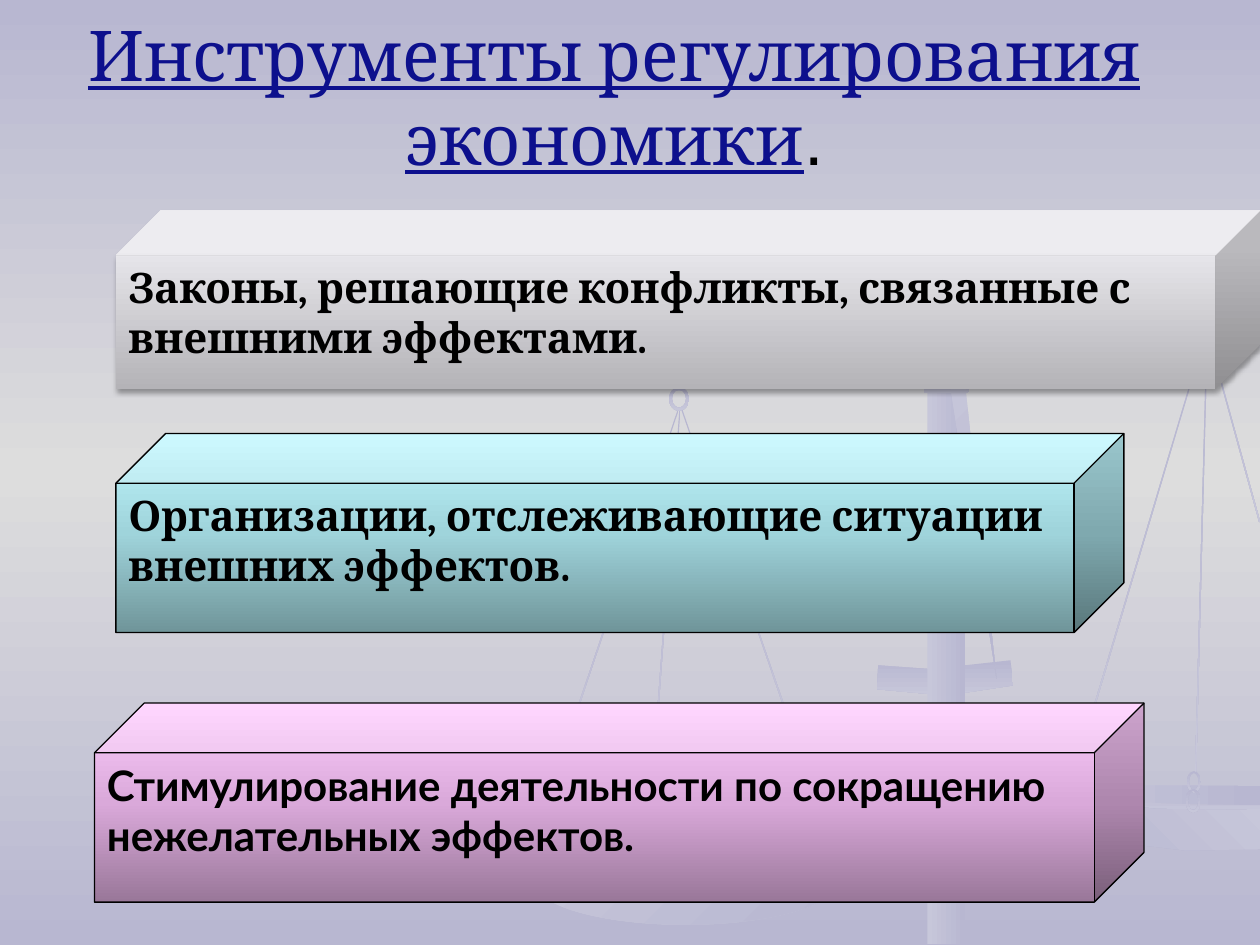
"""Builds the slide on instruments of economic regulation, with three blocks over a pair of scales."""
from lxml import etree
from pptx import Presentation, util as u
from pptx.dml.color import RGBColor
from pptx.enum import shapes as s, text as t
from pptx.oxml import ns

PX = 9144
DARK, LIGHT = "B8B7D1", "C7C7DA"
LIGHTEN, DEEPEN = [(0, DARK), (100, LIGHT)], [(0, LIGHT), (100, DARK)]
RECT, OVAL, ROUND, RING = (s.MSO_SHAPE.RECTANGLE, s.MSO_SHAPE.OVAL,
                           s.MSO_SHAPE.ROUNDED_RECTANGLE, s.MSO_SHAPE.DONUT)


def shade(fill, owner, angle, stops):
    fill.gradient()
    fill.gradient_angle = (360 - angle) % 360
    ramp = owner.xpath(".//a:gsLst")[0]
    for old in list(ramp):
        ramp.remove(old)
    for position, colour in stops:
        stop = etree.SubElement(ramp, ns.qn("a:gs"), pos=str(position * 1000))
        etree.SubElement(stop, ns.qn("a:srgbClr"), val=colour)


def style(font, name, colour, **options):
    font.name = name
    font.color.rgb = RGBColor.from_string(colour)
    for option, value in options.items():
        setattr(font, option, value)


deck = Presentation()
deck.slide_width, deck.slide_height = 1000 * PX, 750 * PX
slide = deck.slides.add_slide(deck.slide_layouts[6])
shade(slide.background.fill, slide.element, 90, [(0, DARK), (50, "DDDDDD"), (100, DARK)])

cords = [(904, 260, 360, 16.6), (953, 266, 347, 1.5), (979, 264, 153, 344.6),
         (598, 315, 353, 341), (479, 316, 368, 18.6), (527, 325, 331, 4.2)]
rings = [(846, 609, 11, 17), (531, 293, 16, 17), (531, 307, 16, 19), (951, 234, 15, 17), (950, 249, 16, 19),
         (942, 612, 11, 17), (941, 626, 12, 19), (509, 655, 15, 16), (656, 672, 16, 19), (417, 672, 12, 16),
         (650, 658, 16, 17)]
hooks = [[(x, y), (x + 18, y - 2), (x + 13, y + 10), (x + 13, y + 25), (x + 5, y + 25), (x + 5, y + 11)]
         for x, y in [(531, 270), (950, 211)]]
crosspiece = [(697, 528), (739, 531), (802, 524), (804, 544), (751, 552), (696, 547)]
right_rim = [(1000, 626), (910, 624), (836, 624), (827, 628), (852, 638), (914, 644), (1000, 645)]
right_bowl = [(831, 633), (842, 649), (882, 668), (941, 675), (1000, 674), (1000, 643), (918, 642)]
right_pan = [(1000, 624), (862, 623), (834, 628), (878, 635), (933, 638), (1000, 639)]
beam = [(973, 196), (976, 208), (525, 273), (524, 264), (737, 212)]
stay = [(791, 539), (750, 280), (748, 268), (760, 265), (763, 277)]
cap = [(752, 247), (772, 253), (779, 271), (724, 271), (732, 253)]

parts = [(RECT, (734, 237, 34, 18), 0, 90, LIGHTEN), (OVAL, (746, 206, 8, 8), 0, 90, LIGHTEN)]
parts += [(RECT, (x, y, 1, length), turn, 90, LIGHTEN) for x, y, length, turn in cords]
parts += [(None, outline, 0, angle, stops) for outline, angle, stops in [
    (crosspiece, 90, LIGHTEN), (right_rim, 90, LIGHTEN), (right_bowl, 315, LIGHTEN), (right_pan, 0, DEEPEN),
    (hooks[0], 90, LIGHTEN), (hooks[1], 90, LIGHTEN), (beam, 0, DEEPEN)]]
parts += [(RING, box, 0, 90, LIGHTEN) for box in rings]
parts += [
    (OVAL, (424, 666, 240, 68), 0, 45, DEEPEN),
    (OVAL, (416, 666, 261, 50), 0, 90, LIGHTEN),
    (OVAL, (424, 670, 247, 38), 0, 0, LIGHTEN),
    (RECT, (736, 308, 30, 441), 0, 0, DEEPEN),
    (RECT, (744, 268, 13, 42), 0, 90, LIGHTEN),
    (ROUND, (733, 303, 36, 9), 0, 90, LIGHTEN),
    (None, stay, 0, 45, DEEPEN),
    (None, cap, 0, 0, DEEPEN),
]
scales = slide.shapes.add_group_shape()
for preset, geometry, turn, angle, stops in parts:
    if preset is None:
        outline = scales.shapes.build_freeform(*geometry[0], scale=PX)
        outline.add_line_segments(geometry[1:])
        part = outline.convert_to_shape()
    else:
        part = scales.shapes.add_shape(preset, *[length * PX for length in geometry])
    if preset is RING:
        part.adjustments[0] = 0.15
    part.rotation = turn
    part.shadow.inherit = False
    part.line.fill.background()
    shade(part.fill, part.element, angle, stops)

title = slide.shapes.add_textbox(25 * PX, 17 * PX, 925 * PX, 117 * PX).text_frame
title.word_wrap = True
title.vertical_anchor = t.MSO_ANCHOR.MIDDLE
heading = title.paragraphs[0]
heading.alignment = t.PP_ALIGN.CENTER
heading.font.size = u.Pt(40)
for words, face, colour, underline in [("Инструменты регулирования экономики", "Cambria", "0D108D", True),
                                       (".", "Arial", "000000", False)]:
    run = heading.add_run()
    run.text = words
    style(run.font, face, colour, underline=underline)

instruments = [
    ((92, 167, 908, 142), [(0, "B4B3B7"), (80, "E9E8ED"), (100, "EAE9EE")], False, "Cambria",
     "Законы, решающие конфликты, связанные с внешними эффектами."),
    ((92, 344, 800, 158), [(0, "70959A"), (50, "9FD4DB"), (100, "C1F8FF")], True, "Cambria",
     "Организации, отслеживающие ситуации внешних эффектов."),
    ((75, 558, 833, 158), [(0, "997799"), (50, "DAA9DA"), (100, "FFCCFF")], True, "Lato",
     "Стимулирование деятельности по сокращению нежелательных эффектов."),
]
for box, stops, outlined, face, words in instruments:
    block = slide.shapes.add_shape(s.MSO_SHAPE.CUBE, *[length * PX for length in box])
    block.shadow.inherit = False
    shade(block.fill, block.element, 270, stops)
    if outlined:
        block.line.color.rgb = RGBColor.from_string("000000")
        block.line.width = u.Pt(0.75)
    else:
        block.line.fill.background()
        effects = block.element.xpath("./p:spPr/a:effectLst")[0]
        shadow = etree.SubElement(effects, ns.qn("a:outerShdw"), blurRad=str(u.Pt(3.1)), dist=str(u.Pt(1.8)),
                                  dir="5400000", rotWithShape="0")
        tint = etree.SubElement(shadow, ns.qn("a:srgbClr"), val="000000")
        etree.SubElement(tint, ns.qn("a:alpha"), val="35000")
    block.text_frame.word_wrap = True
    block.text_frame.vertical_anchor = t.MSO_ANCHOR.TOP
    line = block.text_frame.paragraphs[0]
    line.text = words
    line.alignment = t.PP_ALIGN.LEFT
    style(line.font, face, "000000", size=u.Pt(24), bold=True)

deck.save("out.pptx")
